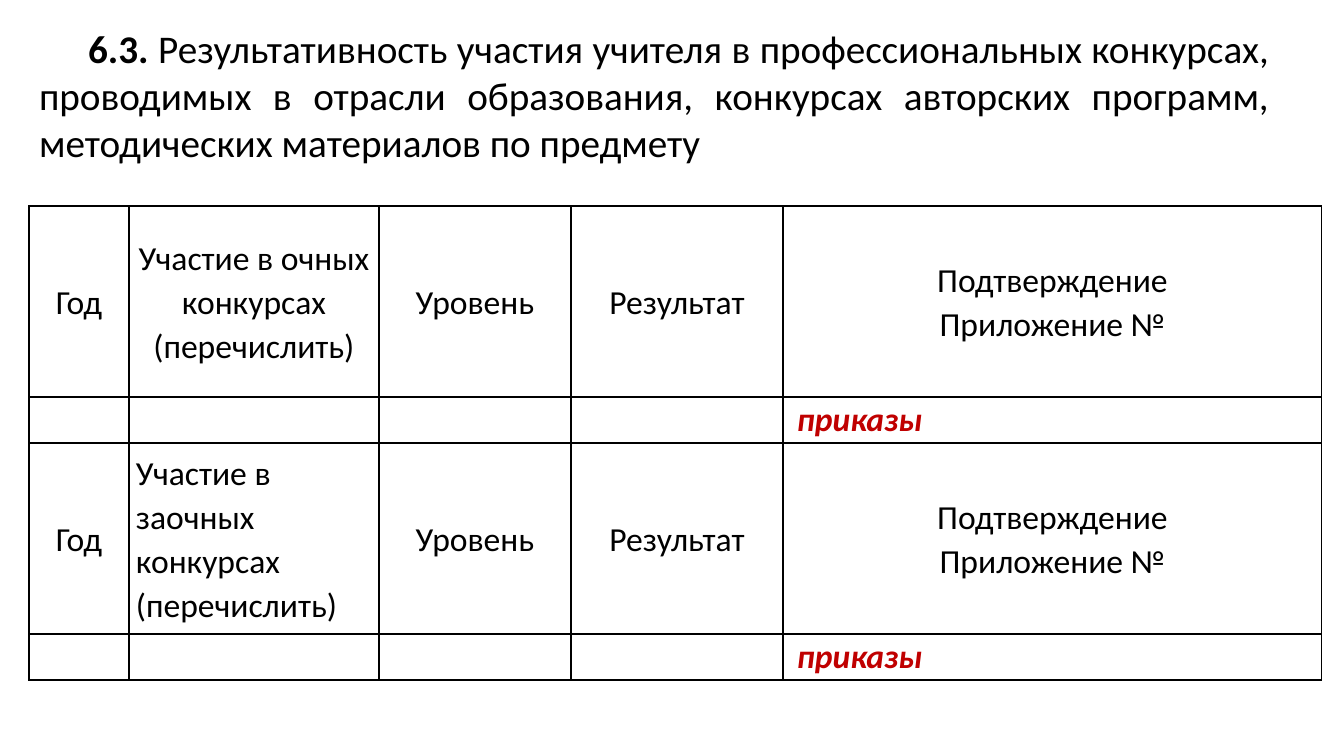
from pptx import Presentation
from pptx import util as u
from pptx.dml.color import RGBColor
from pptx.enum import text
from pptx.oxml import parse_xml
from pptx.oxml.ns import nsdecls

BLACK = RGBColor(0x00, 0x00, 0x00)
RED = RGBColor(0xC0, 0x00, 0x00)
FONT = "Calibri"
PX_PER_INCH = 100.8

COLUMNS = [100, 250, 192, 212, 539]
ROWS = [191, 46, 191, 46]
CONTESTS = [
    ("Участие в очных конкурсах (перечислить)", text.PP_ALIGN.CENTER),
    ("Участие в заочных конкурсах (перечислить)", text.PP_ALIGN.LEFT),
]


def px(n):
    return u.Emu(round(n * 914400 / PX_PER_INCH))


def style(font, size, color=BLACK, bold=False, italic=False):
    font.name, font.size, font.color.rgb = FONT, u.Pt(size), color
    font.bold, font.italic = bold, italic


def add_heading(s, x, y, w, h):
    title = s.shapes.title
    title.left, title.top, title.width, title.height = map(px, (x, y, w, h))
    tf = title.text_frame
    tf.word_wrap = True
    tf.auto_size = text.MSO_AUTO_SIZE.SHAPE_TO_FIT_TEXT
    tf.vertical_anchor = text.MSO_ANCHOR.MIDDLE
    p = tf.paragraphs[0]
    p.alignment = text.PP_ALIGN.JUSTIFY
    p.line_spacing, p.space_before = 1.0, u.Pt(0)
    pPr = p._p.get_or_add_pPr()
    pPr.set("marL", "0")
    pPr.set("indent", str(px(49)))
    for words, bold in [
        ("6.3. ", True),
        ("Результативность участия учителя в профессиональных конкурсах, "
         "проводимых в отрасли образования, конкурсах авторских программ, "
         "методических материалов по предмету", False),
    ]:
        r = p.add_run()
        r.text = words
        style(r.font, 28, bold=bold)


def outline_cell(cell):
    tcPr = cell._tc.get_or_add_tcPr()
    for i, side in enumerate(("lnL", "lnR", "lnT", "lnB")):
        tcPr.insert(i, parse_xml(
            f'<a:{side} {nsdecls("a")} w="12700"><a:solidFill>'
            f'<a:srgbClr val="{BLACK}"/></a:solidFill></a:{side}>'))


def fill_cell(cell, words, align, color=BLACK, emphasis=False):
    tf = cell.text_frame
    tf.text = words
    for p in tf.paragraphs:
        p.alignment, p.line_spacing = align, 1.07
        style(p.font, 24, color, emphasis, emphasis)
        for r in p.runs:
            style(r.font, 24, color, emphasis, emphasis)


def add_contest_table(s, x, y):
    frame = s.shapes.add_table(len(ROWS), len(COLUMNS), px(x), px(y),
                               px(sum(COLUMNS)), px(sum(ROWS)))
    table = frame.table
    table.first_row = table.horz_banding = False
    for column, w in zip(table.columns, COLUMNS):
        column.width = px(w)
    for row, h in zip(table.rows, ROWS):
        row.height = px(h)

    # Plain outlined cells
    for cell in table.iter_cells():
        cell.fill.background()
        cell.margin_left = cell.margin_right = px(7)
        cell.margin_top = cell.margin_bottom = 0
        outline_cell(cell)

    # Each contest type has a header row and a row for its entries
    center = text.PP_ALIGN.CENTER
    for i, (contest, align) in enumerate(CONTESTS):
        labels = ["Год", contest, "Уровень", "Результат",
                  "Подтверждение\nПриложение №"]
        for col, label in enumerate(labels):
            cell = table.cell(2 * i, col)
            cell.vertical_anchor = text.MSO_ANCHOR.MIDDLE
            fill_cell(cell, label, align if col == 1 else center)
        proof = table.cell(2 * i + 1, len(COLUMNS) - 1)
        proof.margin_left = px(14)
        fill_cell(proof, "приказы", text.PP_ALIGN.LEFT, RED, True)


def main():
    prs = Presentation()
    prs.slide_width, prs.slide_height = px(1344), px(756)
    s = prs.slides.add_slide(prs.slide_layouts[5])
    add_contest_table(s, 29, 206)
    add_heading(s, 29, 19, 1250, 152)
    prs.save("out.pptx")


if __name__ == "__main__":
    main()
